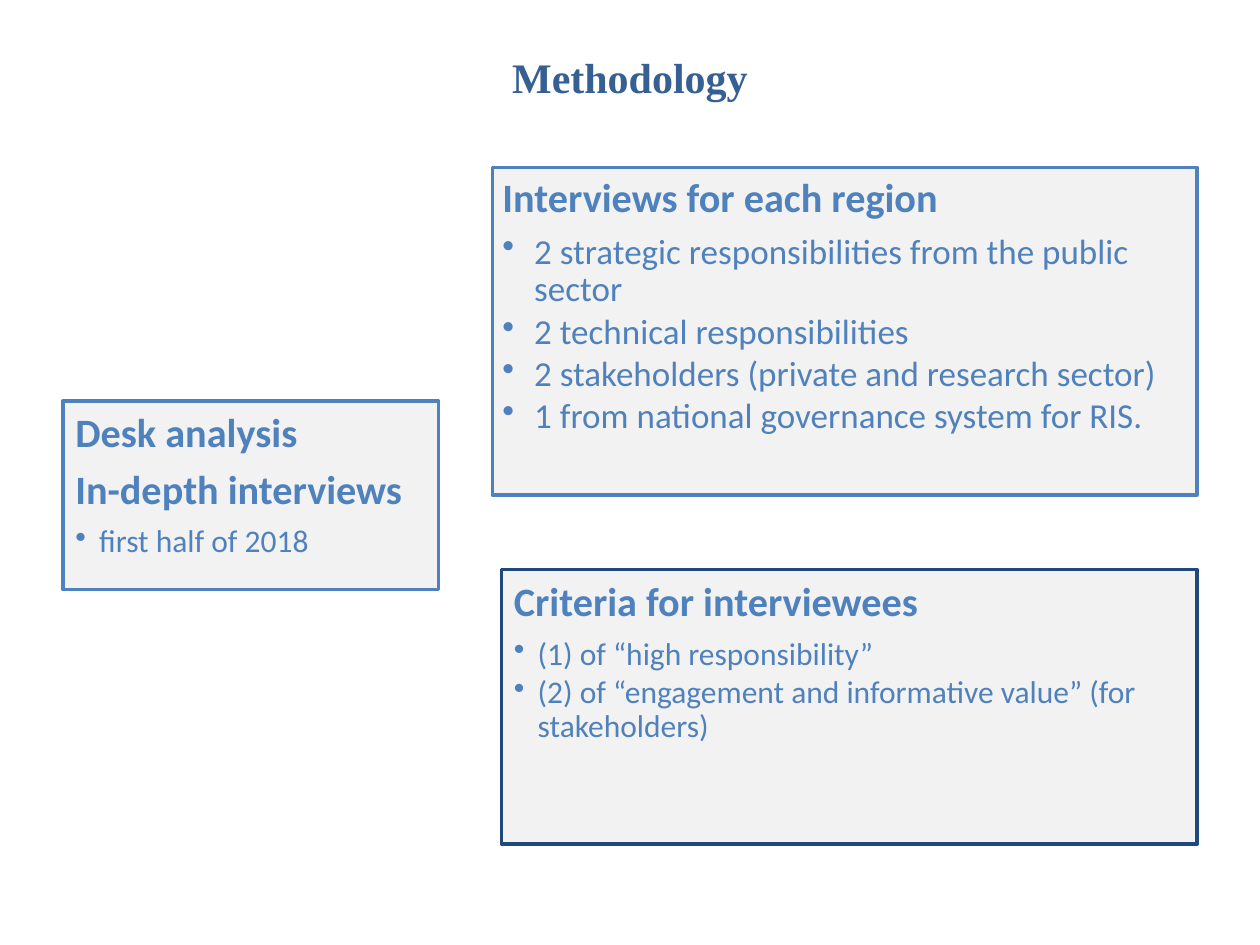
from lxml.etree import SubElement
from pptx import Presentation
from pptx.dml.color import RGBColor
from pptx.enum.shapes import MSO_SHAPE
from pptx.enum.text import MSO_ANCHOR, PP_ALIGN
from pptx.oxml.ns import qn
from pptx.util import Cm, Pt

COLORS = {"title": "376092", "text": "4F81BD", "panel": "F2F2F2", "dark": "1F497D"}
TITLE = "Methodology"
PANELS = [
    {
        "place": (1.27, 8.08, 7.57, 3.81), "line": "text", "inset": 0.25,
        "headings": ["Desk analysis", "In-depth interviews"],
        "bullets": ["first half of 2018"], "size": 18, "indent": 0.48,
    },
    {
        "place": (9.93, 3.38, 14.2, 6.6), "line": "text", "inset": 0.2,
        "headings": ["Interviews for each region"],
        "bullets": [
            "2 strategic responsibilities from the public sector",
            "2 technical responsibilities",
            "2 stakeholders (private and research sector)",
            "1 from national governance system for RIS.",
        ],
        "size": 20, "indent": 0.64,
    },
    {
        "place": (10.11, 11.48, 14.02, 5.54), "line": "dark", "inset": 0.25,
        "headings": ["Criteria for interviewees"],
        "bullets": [
            "(1) of “high responsibility”",
            "(2) of “engagement and informative value” (for stakeholders)",
        ],
        "size": 18, "indent": 0.48,
    },
]


def color(name):
    """Return the named palette colour."""
    return RGBColor.from_string(COLORS[name])


def set_font(paragraph, size, name, tone, bold):
    """Format the whole paragraph."""
    font = paragraph.font
    font.size, font.name, font.bold = Pt(size), name, bold
    font.color.rgb = color(tone)


def add_bullet(paragraph, indent):
    """Give the paragraph a hanging round bullet."""
    properties = paragraph._p.get_or_add_pPr()
    properties.set("marL", str(Cm(indent)))
    properties.set("indent", str(-Cm(indent)))
    SubElement(properties, qn("a:buChar"), char="•")


def add_panel(slide, panel):
    """Draw a bordered panel with headings and bullets."""
    box = slide.shapes.add_shape(MSO_SHAPE.RECTANGLE, *map(Cm, panel["place"]))
    box.shadow.inherit = False
    box.fill.solid()
    box.fill.fore_color.rgb = color("panel")
    box.line.color.rgb = color(panel["line"])
    box.line.width = Pt(2)
    frame = box.text_frame
    frame.word_wrap = True
    frame.vertical_anchor = MSO_ANCHOR.TOP
    frame.margin_left = frame.margin_right = Cm(panel["inset"])
    frame.margin_top = frame.margin_bottom = Cm(panel["inset"])
    lines = [(text, False) for text in panel["headings"]]
    lines += [(text, True) for text in panel["bullets"]]
    for index, (text, bulleted) in enumerate(lines):
        paragraph = frame.add_paragraph() if index else frame.paragraphs[0]
        paragraph.text = text
        paragraph.alignment = PP_ALIGN.LEFT
        paragraph.line_spacing = 0.9
        paragraph.space_after = Pt(2.6 if bulleted else 7.3)
        if bulleted:
            paragraph.level = 1
            add_bullet(paragraph, panel["indent"])
        set_font(paragraph, panel["size"] if bulleted else 23, "Calibri", "text", not bulleted)


def main():
    """Build and save the slide."""
    deck = Presentation()
    deck.slide_width, deck.slide_height = Cm(25.4), Cm(19.05)
    slide = deck.slides.add_slide(deck.slide_layouts[5])
    title = slide.shapes.title
    title.left, title.top, title.width, title.height = map(Cm, (1.27, 0.41, 22.86, 2.29))
    title.text_frame.text = TITLE
    title.text_frame.vertical_anchor = MSO_ANCHOR.MIDDLE
    heading = title.text_frame.paragraphs[0]
    heading.alignment = PP_ALIGN.CENTER
    set_font(heading, 24, "Times New Roman", "title", True)
    for panel in PANELS:
        add_panel(slide, panel)
    deck.save("out.pptx")


if __name__ == "__main__":
    main()
